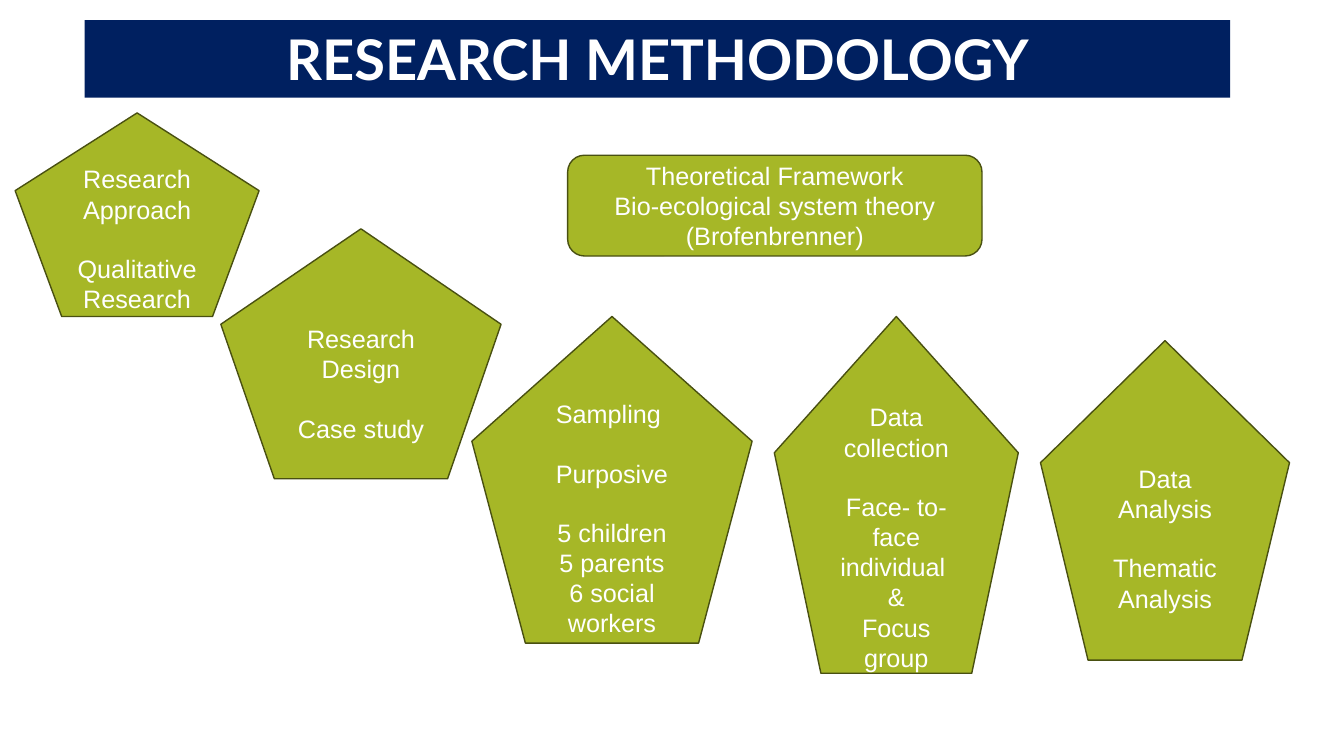
from pptx import Presentation
from pptx.dml.color import RGBColor
from pptx.enum.shapes import MSO_SHAPE as Shape
from pptx.enum.text import MSO_ANCHOR as Anchor, MSO_AUTO_SIZE as AutoSize, PP_ALIGN as Align
from pptx.util import Inches, Pt

TITLE_ONLY = 5


def color(code):
    return RGBColor.from_string(code)


class MethodologySlide:
    navy, green, outline, white = "002060", "A6B727", "495011", "FFFFFF"
    body_font, title_font = "Arial", "Lato"
    body_size = 18
    group_gap = 20.7  # one line of body text

    def __init__(self, deck):
        self.page = deck.slides.add_slide(deck.slide_layouts[TITLE_ONLY])

    def style(self, para, name, size, bold=False):
        para.alignment = Align.CENTER
        para.font.name = name
        para.font.size = Pt(size)
        para.font.bold = bold
        para.font.color.rgb = color(self.white)

    def title(self, text, left, top, width, height):
        box = self.page.shapes.title
        box.left, box.top = Inches(left), Inches(top)
        box.width, box.height = Inches(width), Inches(height)
        box.fill.solid()
        box.fill.fore_color.rgb = color(self.navy)
        frame = box.text_frame
        frame.text = text
        frame.auto_size = AutoSize.NONE
        frame.vertical_anchor = Anchor.BOTTOM
        para = frame.paragraphs[0]
        para.line_spacing = 0.9
        para.space_before = Pt(0)
        self.style(para, self.title_font, 40, bold=True)

    def card(self, kind, position, groups):
        """Add a filled shape; a blank line's height separates its text groups."""
        box = self.page.shapes.add_shape(kind, *map(Inches, position))
        box.shadow.inherit = False
        box.fill.solid()
        box.fill.fore_color.rgb = color(self.green)
        box.line.color.rgb = color(self.outline)
        box.line.width = Pt(1)
        frame = box.text_frame
        frame.word_wrap = True
        frame.vertical_anchor = Anchor.MIDDLE
        para = frame.paragraphs[0]
        for group_index, lines in enumerate(groups):
            for line_index, text in enumerate(lines):
                if group_index or line_index:
                    para = frame.add_paragraph()
                para.text = text
                if group_index and not line_index:
                    para.space_before = Pt(self.group_gap)
                self.style(para, self.body_font, self.body_size)


STEPS = [
    ((0.15, 1.12, 2.42, 2.02), [["Research Approach"], ["Qualitative Research"]]),
    ((2.19, 2.27, 2.78, 2.48), [["Research Design"], ["Case study"]]),
    ((4.68, 3.14, 2.78, 3.24),
     [["Sampling "], ["Purposive"], ["5 children", "5 parents", "6 social workers"]]),
    ((7.68, 3.14, 2.42, 3.54),
     [["Data collection"], ["Face- to- face individual ", "&", "Focus group"]]),
    ((10.32, 3.38, 2.47, 3.17), [["Data Analysis"], ["Thematic", "Analysis"]]),
]
FRAMEWORK = [["Theoretical Framework", "Bio-ecological system theory (Brofenbrenner)"]]


def main():
    deck = Presentation()
    deck.slide_width, deck.slide_height = Inches(13.33), Inches(7.5)
    slide = MethodologySlide(deck)

    # Title banner
    slide.title("RESEARCH METHODOLOGY", 0.84, 0.2, 11.36, 0.77)

    # Research steps
    for position, groups in STEPS:
        slide.card(Shape.REGULAR_PENTAGON, position, groups)

    # Theoretical framework
    slide.card(Shape.ROUNDED_RECTANGLE, (5.63, 1.54, 4.11, 1), FRAMEWORK)

    deck.save("out.pptx")


if __name__ == "__main__":
    main()
